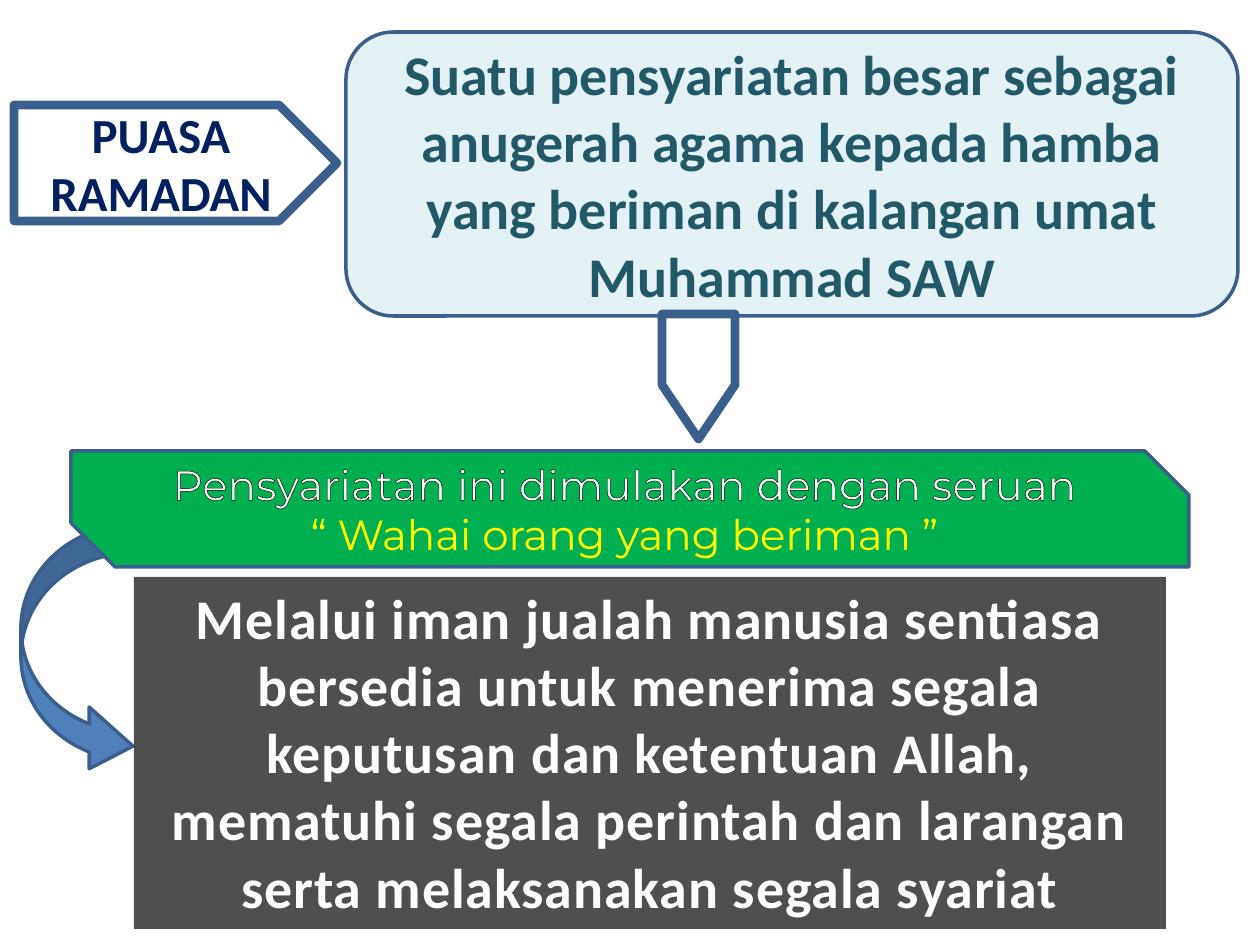
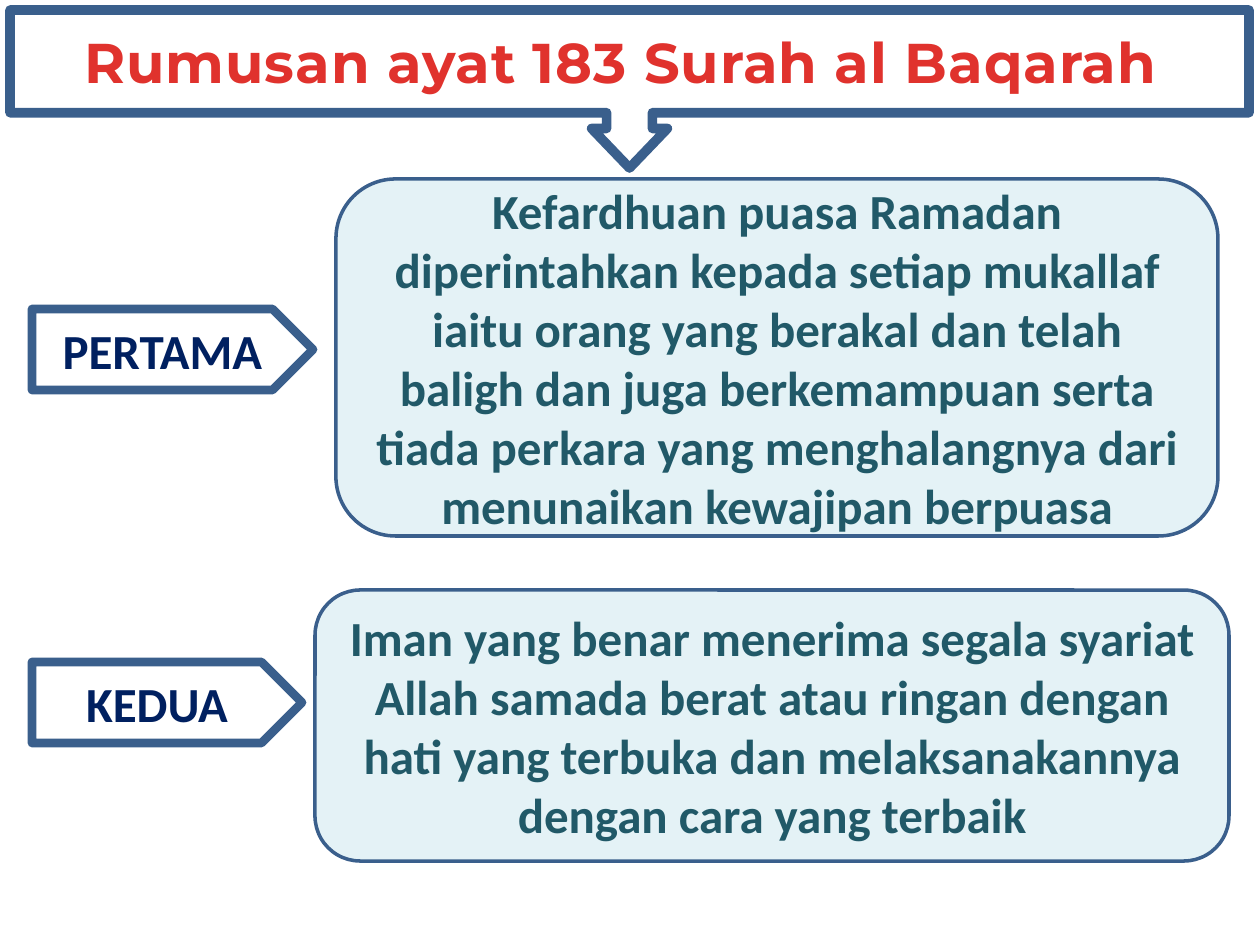
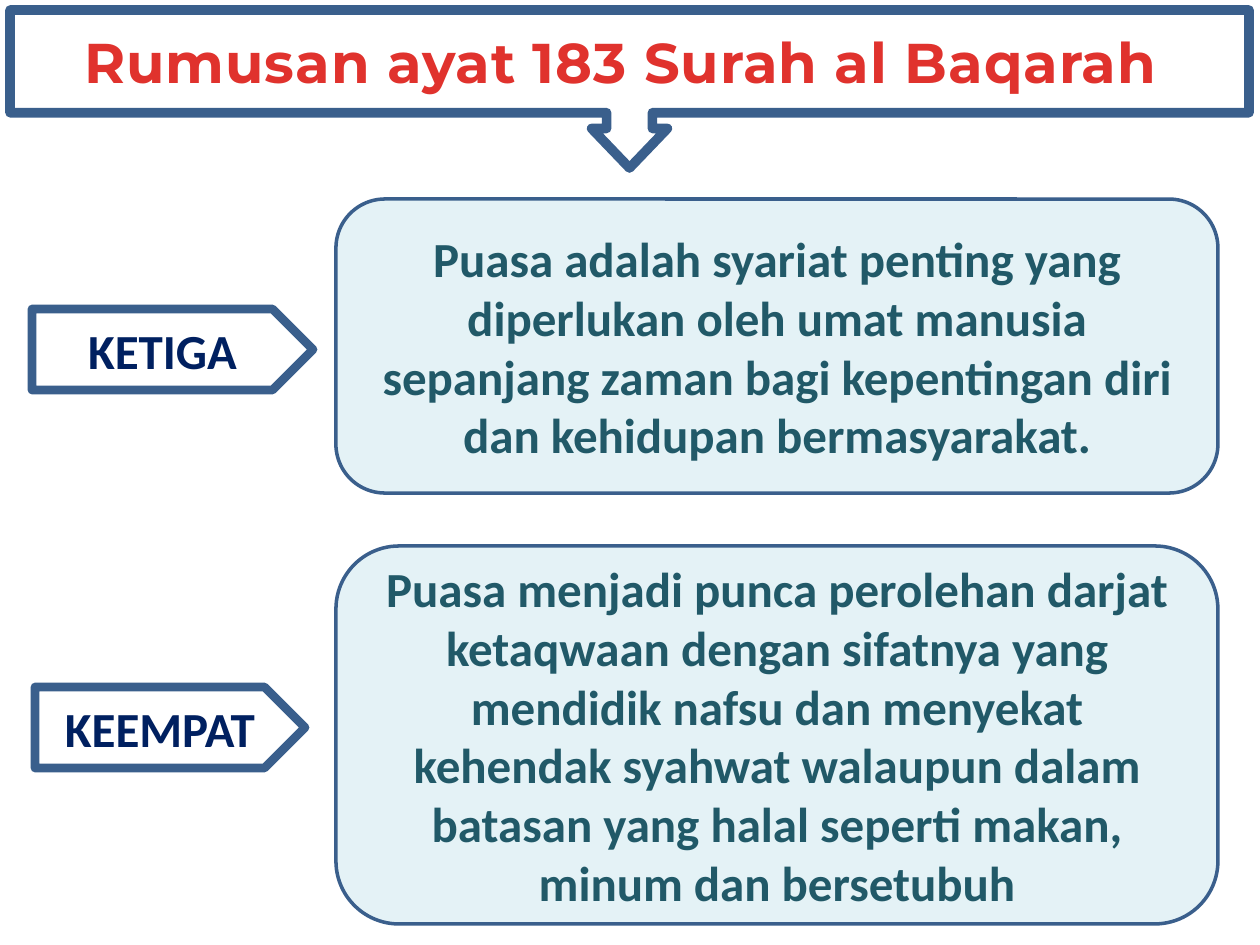
"""Build three slides on the Ramadan fast with labelled panels and arrows."""
import pptx
import pptx.dml.color
import pptx.enum.shapes
import pptx.enum.text
import pptx.oxml
import pptx.oxml.ns
import pptx.util

RGB = pptx.dml.color.RGBColor
SHAPE = pptx.enum.shapes.MSO_SHAPE
ANCHOR = pptx.enum.text.MSO_ANCHOR

EMU_PER_PX = 914400 / 126
WHITE = RGB(0xFF, 0xFF, 0xFF)
BLACK = RGB(0x00, 0x00, 0x00)
BORDER = RGB(0x3A, 0x5F, 0x8C)
PALE_BLUE = RGB(0xDB, 0xEE, 0xF4)
TEAL = RGB(0x21, 0x59, 0x68)
NAVY = RGB(0x00, 0x20, 0x60)
BLUE = RGB(0x4F, 0x81, 0xBD)
GREEN = RGB(0x00, 0xB0, 0x50)
YELLOW = RGB(0xFF, 0xFF, 0x00)
WARM_WHITE = RGB(0xFF, 0xFE, 0xFE)
ORANGE = RGB(0xE7, 0x87, 0x38)
RED = RGB(0xE0, 0x32, 0x2D)
DARK_RED = RGB(0xA2, 0x20, 0x1C)

BODY_FONT = "Calibri"
DISPLAY_FONT = "Montserrat"
TITLE = "Rumusan ayat 183 Surah al Baqarah "


def px(n):
    """Turn pixels into EMU."""
    return pptx.util.Emu(round(n * EMU_PER_PX))


def xml(text):
    """Parse a DrawingML element."""
    ns = pptx.oxml.ns.nsdecls("a")
    return pptx.oxml.parse_xml(text.replace(">", f" {ns}>", 1))


def add_shape(slide, kind, box, fill, line=None, adj=(), alpha=None):
    """Add a flat preset shape at box (left, top, width, height)."""
    sp = slide.shapes.add_shape(kind, *map(px, box))
    sp.shadow.inherit = False
    for i, value in enumerate(adj):
        sp.adjustments[i] = value
    sp.fill.solid()
    sp.fill.fore_color.rgb = fill
    if alpha:
        color = sp.fill._xPr.find(".//" + pptx.oxml.ns.qn("a:srgbClr"))
        color.append(xml(f'<a:alpha val="{alpha * 1000}"></a:alpha>'))
    if line:
        sp.line.color.rgb = BORDER
        sp.line.width = pptx.util.Pt(line)
    else:
        sp.line.fill.background()
    return sp


def write(sp, lines, size, color, font=BODY_FONT, bold=True):
    """Write centred lines in a shape and return its paragraphs."""
    tf = sp.text_frame
    tf.word_wrap = True
    tf.vertical_anchor = ANCHOR.MIDDLE
    tf.text = "\n".join(lines)
    for p in tf.paragraphs:
        p.alignment = pptx.enum.text.PP_ALIGN.CENTER
        p.font.name = font
        p.font.size = pptx.util.Pt(size)
        p.font.bold = bold
        p.font.color.rgb = color
    return tf.paragraphs


def outline(p, color, width):
    """Give the runs of a paragraph an outline and a soft shadow."""
    for r in p.runs:
        rPr = r._r.get_or_add_rPr()
        rPr.append(xml(f'<a:ln w="{pptx.util.Pt(width)}"><a:solidFill>'
                       f'<a:srgbClr val="{color}"/></a:solidFill></a:ln>'))
        rPr.append(xml('<a:effectLst><a:outerShdw blurRad="38100" dist="25400" '
                       f'dir="2700000"><a:srgbClr val="{color}"><a:alpha val="60000"/>'
                       '</a:srgbClr></a:outerShdw></a:effectLst>'))


def space_letters(p):
    """Widen the letter spacing of a paragraph by half a point."""
    for r in p.runs:
        r._r.get_or_add_rPr().set("spc", "50")


def add_panel(slide, box, text, size=28):
    """Add a pale rounded panel of body text."""
    sp = add_shape(slide, SHAPE.ROUNDED_RECTANGLE, box, PALE_BLUE, 2, alpha=74)
    write(sp, [text], size, TEAL)


def add_label(slide, box, *lines):
    """Add a pentagon label that points right."""
    write(add_shape(slide, SHAPE.PENTAGON, box, WHITE, 5), lines, 28, NAVY)


def add_title(slide):
    """Add the callout title with gradient text."""
    sp = add_shape(slide, SHAPE.DOWN_ARROW_CALLOUT, (10, 10, 1239, 158), WHITE, 5.5,
                   (0.29, 0.24, 0.25, 0.65))
    p, = write(sp, [TITLE], 32, RED, DISPLAY_FONT)
    fill = p.font.fill
    fill.gradient()
    fill.gradient_angle = 270
    for stop, color, position in zip(fill.gradient_stops, (RED, DARK_RED), (0.25, 1)):
        stop.color.rgb = color
        stop.position = position
    space_letters(p)


def add_banner(slide):
    """Add the green banner with the opening call."""
    sp = add_shape(slide, SHAPE.SNIP_2_DIAG_RECTANGLE, (71, 451, 1118, 116), GREEN, 2,
                   (0, 0.38))
    lines = ["Pensyariatan ini dimulakan dengan seruan ", "“ Wahai orang yang beriman ” "]
    ps = write(sp, lines, 24, WHITE, DISPLAY_FONT, False)
    ps[1].font.color.rgb = YELLOW
    for p in ps:
        outline(p, BLACK, 0.75)


def add_conclusion(slide, text):
    """Add the dark box of outlined text."""
    sp = add_shape(slide, SHAPE.RECTANGLE, (134, 577, 1032, 352), BLACK, alpha=69)
    p, = write(sp, [text], 32, WARM_WHITE)
    sp.text_frame.vertical_anchor = ANCHOR.TOP
    sp.text_frame.auto_size = pptx.enum.text.MSO_AUTO_SIZE.SHAPE_TO_FIT_TEXT
    outline(p, ORANGE, 1)
    space_letters(p)


def build_intro(slide):
    """Build the slide that introduces the fast."""
    add_panel(slide, (346, 32, 892, 284),
              "Suatu pensyariatan besar sebagai anugerah agama kepada hamba yang "
              "beriman di kalangan umat Muhammad SAW", 32)
    add_shape(slide, SHAPE.CURVED_RIGHT_ARROW, (21, 525, 112, 252), BLUE, 2,
              (0.25, 0.55, 0.39))
    add_label(slide, (14, 105, 323, 116), "PUASA", "RAMADAN")
    add_banner(slide)
    add_conclusion(slide, "Melalui iman jualah manusia sentiasa bersedia untuk menerima "
                   "segala keputusan dan ketentuan Allah, mematuhi segala perintah dan "
                   "larangan serta melaksanakan segala syariat")
    pointer = add_shape(slide, SHAPE.PENTAGON, (636, 340, 125, 73), WHITE, 5, (0.74,))
    pointer.rotation = 90


def build_summary(slide, points):
    """Build a titled slide of (label, label box, text, panel box) points."""
    add_title(slide)
    for label, label_box, text, panel_box in points:
        add_panel(slide, panel_box, text)
        add_label(slide, label_box, label)


def main():
    """Build and save the slides."""
    prs = pptx.Presentation()
    prs.slide_width, prs.slide_height = px(1260), px(945)
    first, second, third = (prs.slides.add_slide(prs.slide_layouts[6]) for _ in range(3))
    build_intro(first)
    build_summary(second, [
        ("PERTAMA", (32, 309, 281, 81),
         "Kefardhuan puasa Ramadan diperintahkan kepada setiap mukallaf iaitu orang yang "
         "berakal dan telah baligh dan juga berkemampuan serta tiada perkara yang "
         "menghalangnya dari menunaikan kewajipan berpuasa", (336, 179, 882, 357)),
        ("KEDUA", (32, 662, 270, 81),
         "Iman yang benar menerima segala syariat Allah samada berat atau ringan dengan "
         "hati yang terbuka dan melaksanakannya dengan cara yang terbaik",
         (315, 590, 914, 271)),
    ])
    build_summary(third, [
        ("KETIGA", (32, 309, 281, 81),
         "Puasa adalah syariat penting yang diperlukan oleh umat manusia sepanjang zaman "
         "bagi kepentingan diri dan kehidupan bermasyarakat.", (336, 199, 882, 294)),
        ("KEEMPAT", (35, 687, 270, 81),
         "Puasa menjadi punca perolehan darjat ketaqwaan dengan sifatnya yang mendidik "
         "nafsu dan menyekat kehendak syahwat walaupun dalam batasan yang halal seperti "
         "makan, minum dan bersetubuh", (336, 546, 882, 378)),
    ])
    prs.save("out.pptx")


if __name__ == "__main__":
    main()
